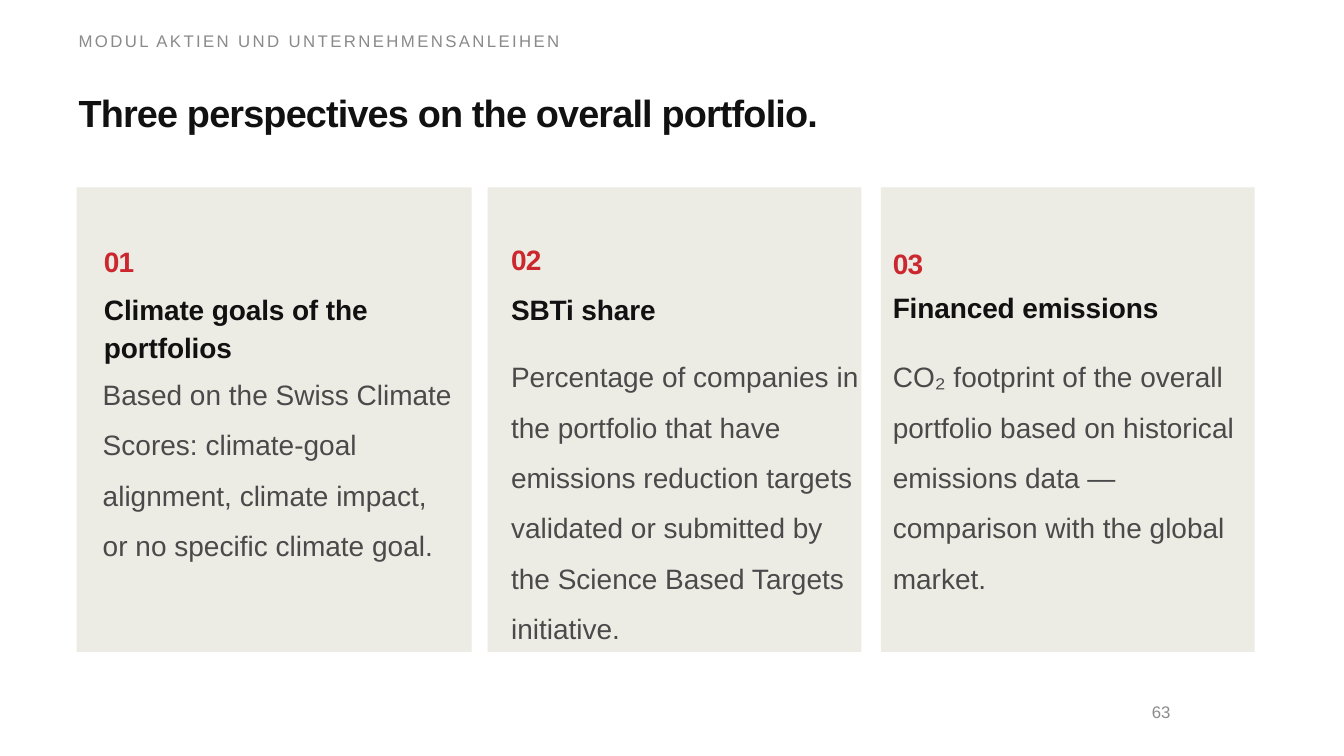
from pptx import Presentation
from pptx.dml.color import RGBColor
from pptx.enum.shapes import MSO_SHAPE
from pptx.enum.text import MSO_ANCHOR, MSO_AUTO_SIZE, PP_ALIGN
from pptx.util import Cm, Pt

RECTANGLE = MSO_SHAPE.RECTANGLE
TOP, MIDDLE = MSO_ANCHOR.TOP, MSO_ANCHOR.MIDDLE
LEFT, RIGHT = PP_ALIGN.LEFT, PP_ALIGN.RIGHT
NO_AUTOFIT = MSO_AUTO_SIZE.NONE

INK, RED, BODY_GREY, CARD_FILL = "111111", "CC272E", "4A4A4A", "ECEBE4"
MARGIN_LEFT = 1.93
CARD_TOP, CARD_HEIGHT, TEXT_WIDTH = 4.72, 11.71, 8.94


def color(hex_string):
    return RGBColor.from_string(hex_string)


def write(shape, text, size, hex_string, bold=False, tracking=0, line_spacing=1.0,
          align=LEFT, anchor=TOP, inset=0.05):
    """Format a text shape and fill it with one run; tracking is in points."""
    frame = shape.text_frame
    frame.word_wrap = True
    frame.auto_size = NO_AUTOFIT
    frame.vertical_anchor = anchor
    frame.margin_left = frame.margin_right = Cm(inset)
    frame.margin_top = frame.margin_bottom = Cm(0.05)
    paragraph = frame.paragraphs[0]
    paragraph.alignment = align
    paragraph.line_spacing = line_spacing
    run = paragraph.add_run()
    run.text = text
    run.font.name = "Arial"
    run.font.size = Pt(size)
    run.font.bold = bold
    run.font.color.rgb = color(hex_string)
    if tracking:
        run._r.get_or_add_rPr().set("spc", str(round(tracking * 100)))


presentation = Presentation()
presentation.slide_width, presentation.slide_height = Cm(33.87), Cm(19.05)
slide = presentation.slides.add_slide(presentation.slide_layouts[5])
shapes = slide.shapes

# Module line and title
module_line = shapes.add_textbox(Cm(MARGIN_LEFT), Cm(0.79), Cm(12.57), Cm(0.58))
write(module_line, "MODUL AKTIEN UND UNTERNEHMENSANLEIHEN", 12, "8A8A8A",
      tracking=1.7, line_spacing=0.9)

title = shapes.title
title.left, title.top, title.width, title.height = Cm(MARGIN_LEFT), Cm(2.16), Cm(27.25), Cm(3.58)
write(title, "Three perspectives on the overall portfolio.", 27, INK,
      bold=True, tracking=-0.6, line_spacing=1.04)

# Cards: left, width, then (left, top, text) of number, heading and description
cards = [
    (MARGIN_LEFT, 9.96,
     (2.57, 6.10, "01"),
     (2.57, 7.19, "Climate goals of the portfolios"),
     (2.54, 9.04, "Based on the Swiss Climate Scores: climate-goal alignment, "
                  "climate impact, or no specific climate goal.")),
    (12.29, 9.42,
     (12.83, 6.07, "02"),
     (12.83, 7.19, "SBTi share"),
     (12.83, 8.59, "Percentage of companies in the portfolio that have emissions "
                   "reduction targets validated or submitted by the Science Based "
                   "Targets initiative.")),
    (22.20, 9.42,
     (22.45, 6.15, "03"),
     (22.45, 7.14, "Financed emissions"),
     (22.45, 8.59, "CO₂ footprint of the overall portfolio based on historical "
                   "emissions data — comparison with the global market.")),
]
# Height and formatting of number, heading and description
text_styles = [
    (1.07, {"hex_string": RED, "bold": True, "tracking": -0.6}),
    (0.69, {"hex_string": INK, "bold": True, "tracking": -0.1, "line_spacing": 1.15}),
    (1.98, {"hex_string": BODY_GREY, "line_spacing": 1.5}),
]
for card_left, card_width, *texts in cards:
    card = shapes.add_shape(RECTANGLE, Cm(card_left), Cm(CARD_TOP), Cm(card_width), Cm(CARD_HEIGHT))
    card.shadow.inherit = False
    card.fill.solid()
    card.fill.fore_color.rgb = color(CARD_FILL)
    card.line.fill.background()
    for (left, top, text), (height, style) in zip(texts, text_styles):
        box = shapes.add_textbox(Cm(left), Cm(top), Cm(TEXT_WIDTH), Cm(height))
        write(box, text, 20, **style)

# Page number
page_number = shapes.add_textbox(Cm(23.93), Cm(17.42), Cm(5.82), Cm(1.02))
write(page_number, "63", 12, "8C8C8C", align=RIGHT, anchor=MIDDLE, inset=0.25)

presentation.save("out.pptx")
